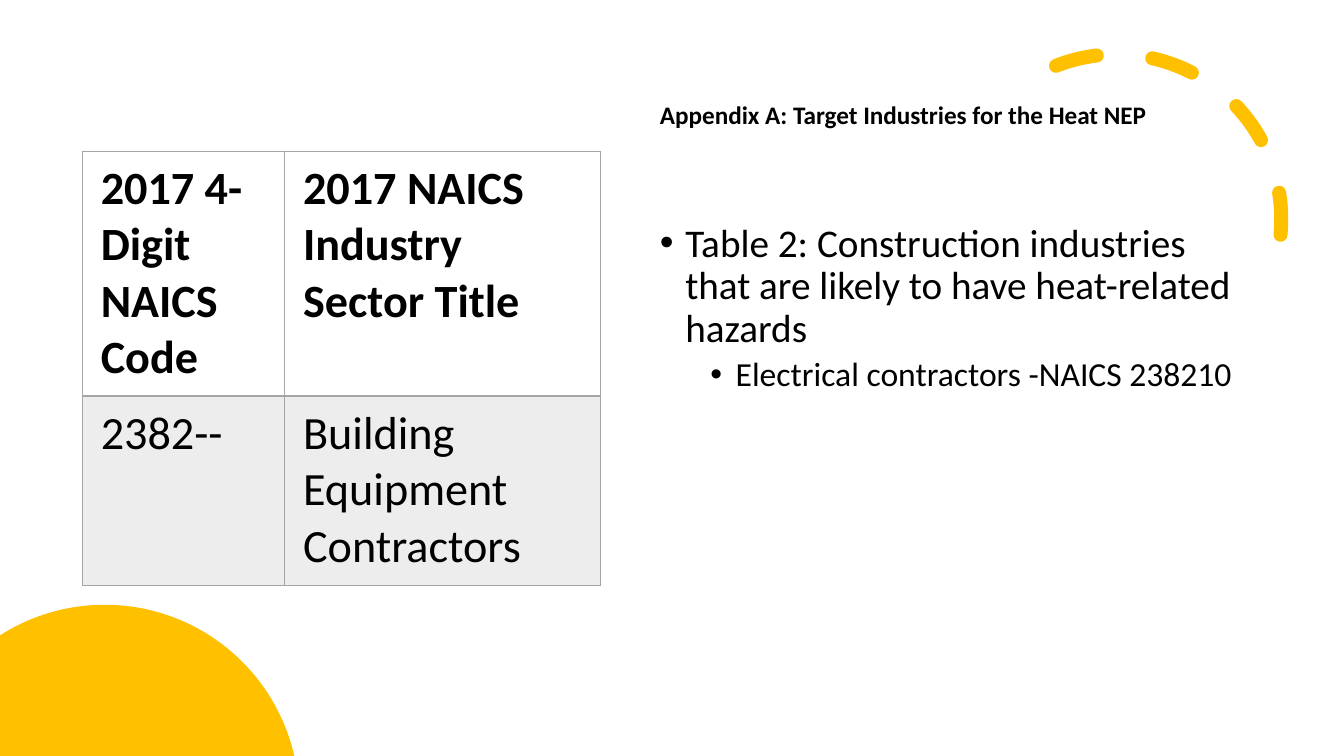
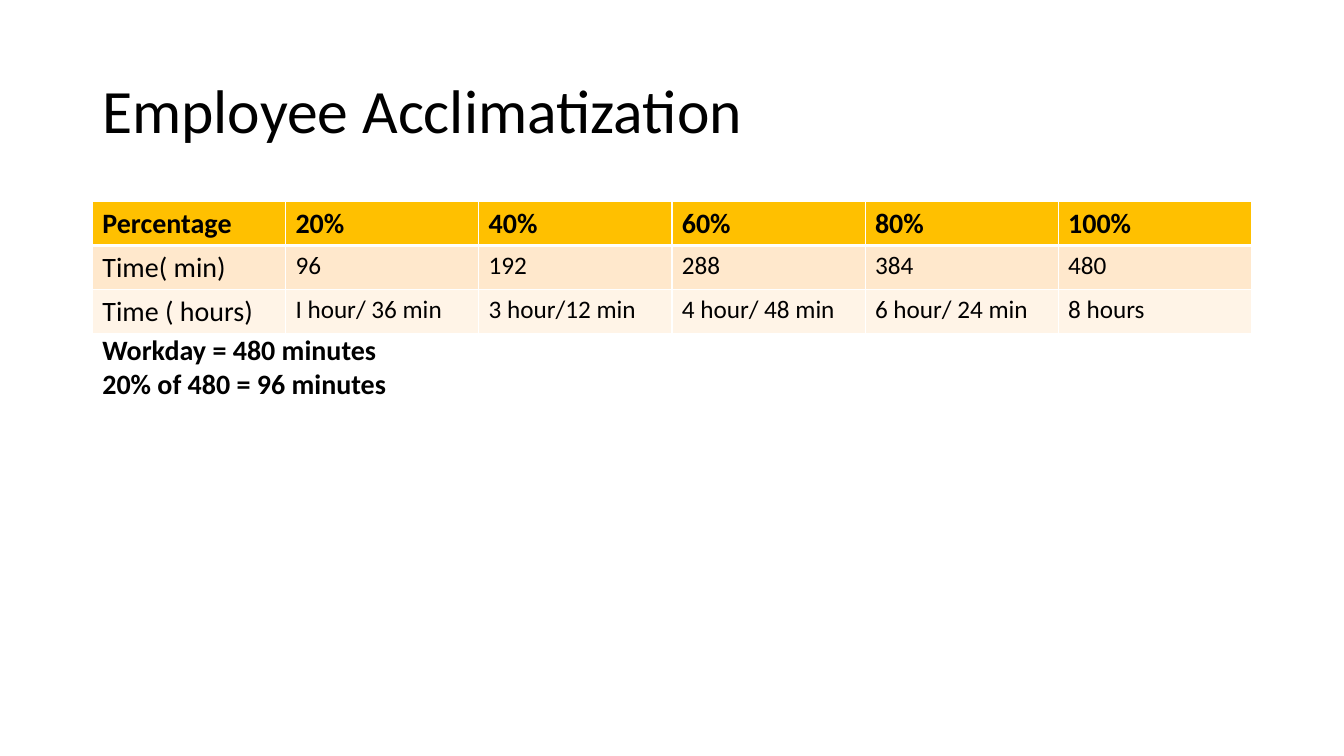
from math import acos, asin, cos, pi, sin

from lxml import etree
from pptx import Presentation
from pptx.dml.color import RGBColor
from pptx.enum.dml import MSO_LINE
from pptx.enum.shapes import MSO_SHAPE as Shape
from pptx.enum.text import MSO_ANCHOR as Anchor
from pptx.oxml.ns import qn
from pptx.util import Cm, Pt

# Shared style
FONT = "Calibri"
BLACK, WHITE, GOLD, GREY = "000000", "FFFFFF", "FFC000", "A5A5A5"
SLIDE_WIDTH, SLIDE_HEIGHT = 33.87, 19.05

# Content: paragraphs are (text, format)
INDUSTRY_TITLE = "Appendix A: Target Industries for the Heat NEP"
INDUSTRY_POINTS = [
    ("Table 2: Construction industries that are likely to have heat-related hazards",
     {"size": 28, "indent": 0.64, "before": 10}),
    ("Electrical contractors -NAICS 238210",
     {"size": 24, "indent": 1.91, "before": 5}),
]
INDUSTRY_ROWS = [
    ["2017 4-Digit\nNAICS Code", "2017 NAICS Industry Sector Title"],
    ["2382--", "Building Equipment Contractors"],
]
INDUSTRY_TABLE = {
    "columns": [5.1, 7.95], "rows": [6.17, 4.78], "fills": [None, "EDEDED"],
    "margins": (0.46, 0.23), "border": GREY, "header_line": 2,
    "label_size": 33, "value_size": 33,
}

ACCLIMATIZATION_TITLE = "Employee Acclimatization"
ACCLIMATIZATION_ROWS = [
    ["Percentage", "20%", "40%", "60%", "80%", "100%"],
    ["Time( min)", "96", "192", "288", "384", "480"],
    ["Time ( hours)", "I hour/ 36 min", "3 hour/12 min", "4 hour/ 48 min",
     "6 hour/ 24 min", "8 hours"],
]
ACCLIMATIZATION_TABLE = {
    "columns": [29.21 / 6] * 6, "rows": [1.1] * 3,
    "fills": [GOLD, "FFE8CC", "FFF4E7"],
    "margins": (0.25, 0.13), "border": WHITE, "header_line": 3,
    "label_size": 20, "value_size": 18,
}
WORKDAY_NOTES = [
    (text, {"size": 20, "bold": True, "spacing": 1.0})
    for text in ("Workday = 480 minutes", "20% of 480 = 96 minutes")
]


def color(value):
    return RGBColor.from_string(value)


def write(frame, paragraphs):
    """Fill a text frame with (text, format) paragraphs."""
    for index, (text, style) in enumerate(paragraphs):
        paragraph = frame.paragraphs[0] if index == 0 else frame.add_paragraph()
        run = paragraph.add_run()
        run.text = text
        font_values = {"name": FONT, "size": Pt(style["size"]),
                       "bold": style.get("bold", False)}
        for name, value in font_values.items():
            setattr(run.font, name, value)
        run.font.color.rgb = color(BLACK)
        paragraph.line_spacing = style.get("spacing", 0.9)
        paragraph.space_before = Pt(style.get("before", 0))
        if "indent" in style:
            properties = paragraph._p.get_or_add_pPr()
            properties.set("marL", str(Cm(style["indent"])))
            properties.set("indent", str(-Cm(0.64)))
            etree.SubElement(properties, qn("a:buFont"), typeface="Arial")
            etree.SubElement(properties, qn("a:buChar"), char="•")


def add_text(slide, box, paragraphs, anchor=Anchor.TOP):
    frame = slide.shapes.add_textbox(*map(Cm, box)).text_frame
    frame.word_wrap = True
    frame.vertical_anchor = anchor
    write(frame, paragraphs)


def add_title(slide, box, text, size, bold=False):
    add_text(slide, box, [(text, {"size": size, "bold": bold})], Anchor.MIDDLE)


def set_borders(cell, line_color, widths):
    """Draw cell edges; widths maps L, R, T, B to points."""
    properties = cell._tc.get_or_add_tcPr()
    for side, width in widths.items():
        line = etree.SubElement(properties, qn(f"a:ln{side}"), w=str(Pt(width)))
        fill = etree.SubElement(line, qn("a:solidFill"))
        etree.SubElement(fill, qn("a:srgbClr"), val=line_color)


def add_data_table(slide, left, top, data, style):
    columns, rows = style["columns"], style["rows"]
    table = slide.shapes.add_table(
        len(rows), len(columns), Cm(left), Cm(top),
        Cm(sum(columns)), Cm(sum(rows))).table
    table.horz_banding = False
    for column, width in zip(table.columns, columns):
        column.width = Cm(width)
    for row, height in zip(table.rows, rows):
        row.height = Cm(height)

    side, vertical = map(Cm, style["margins"])
    margins = {"margin_left": side, "margin_right": side,
               "margin_top": vertical, "margin_bottom": vertical}
    for row_index, texts in enumerate(data):
        for column_index, text in enumerate(texts):
            cell = table.cell(row_index, column_index)
            for name, value in margins.items():
                setattr(cell, name, value)
            is_label = row_index == 0 or column_index == 0
            text_style = {
                "size": style["label_size" if is_label else "value_size"],
                "bold": row_index == 0, "spacing": 1.0}
            write(cell.text_frame, [(line, text_style) for line in text.split("\n")])
            # The edge below the header is the heavy one
            set_borders(cell, style["border"], {
                "L": 1, "R": 1,
                "T": style["header_line"] if row_index == 1 else 1,
                "B": style["header_line"] if row_index == 0 else 1})
            fill = style["fills"][row_index]
            if fill:
                cell.fill.solid()
                cell.fill.fore_color.rgb = color(fill)
            else:
                cell.fill.background()


def add_dashed_arc(slide):
    arc = slide.shapes.add_shape(Shape.ARC, Cm(23.98), Cm(1.37), Cm(8.31), Cm(8.31))
    arc.shadow.inherit = False
    arc.fill.background()
    arc.adjustments[0], arc.adjustments[1] = 144.42, 0
    arc.rotation = 66.1
    arc._element.spPr.find(qn("a:xfrm")).set("flipH", "1")
    arc.line.color.rgb = color(GOLD)
    arc.line.width = Pt(10)
    arc.line.dash_style = MSO_LINE.DASH
    arc.line._get_or_add_ln().set("cap", "rnd")


def add_corner_circle(slide):
    """Draw the part of a circle that lies inside the lower left corner."""
    center_x, center_y, radius, steps = 2.64, 20.14, 4.9, 60
    start = acos(-center_x / radius)
    end = asin((center_y - SLIDE_HEIGHT) / radius)
    angles = [start + (end - start) * step / steps for step in range(steps + 1)]
    points = [(Cm(max(0, center_x + radius * cos(angle))),
               Cm(center_y - radius * sin(angle))) for angle in angles]
    builder = slide.shapes.build_freeform(0, Cm(SLIDE_HEIGHT))
    builder.add_line_segments(points, close=True)
    circle = builder.convert_to_shape()
    circle.shadow.inherit = False
    circle.fill.solid()
    circle.fill.fore_color.rgb = color(GOLD)
    circle.line.fill.background()


def build_industry_slide(slide):
    add_dashed_arc(slide)
    add_title(slide, (16.38, 2.18, 15.16, 1.52), INDUSTRY_TITLE, 18, bold=True)
    add_corner_circle(slide)
    add_text(slide, (16.38, 5.51, 15.16, 11.63), INDUSTRY_POINTS)
    add_data_table(slide, 2.08, 3.81, INDUSTRY_ROWS, INDUSTRY_TABLE)


def build_acclimatization_slide(slide):
    add_title(slide, (2.33, 1.02, 29.21, 3.68), ACCLIMATIZATION_TITLE, 44)
    add_data_table(slide, 2.33, 5.08, ACCLIMATIZATION_ROWS, ACCLIMATIZATION_TABLE)
    add_text(slide, (2.33, 8.26, 20.35, 1.96), WORKDAY_NOTES)


def main():
    presentation = Presentation()
    presentation.slide_width = Cm(SLIDE_WIDTH)
    presentation.slide_height = Cm(SLIDE_HEIGHT)
    blank = presentation.slide_layouts[6]
    for build in (build_industry_slide, build_acclimatization_slide):
        build(presentation.slides.add_slide(blank))
    presentation.save("out.pptx")


if __name__ == "__main__":
    main()
